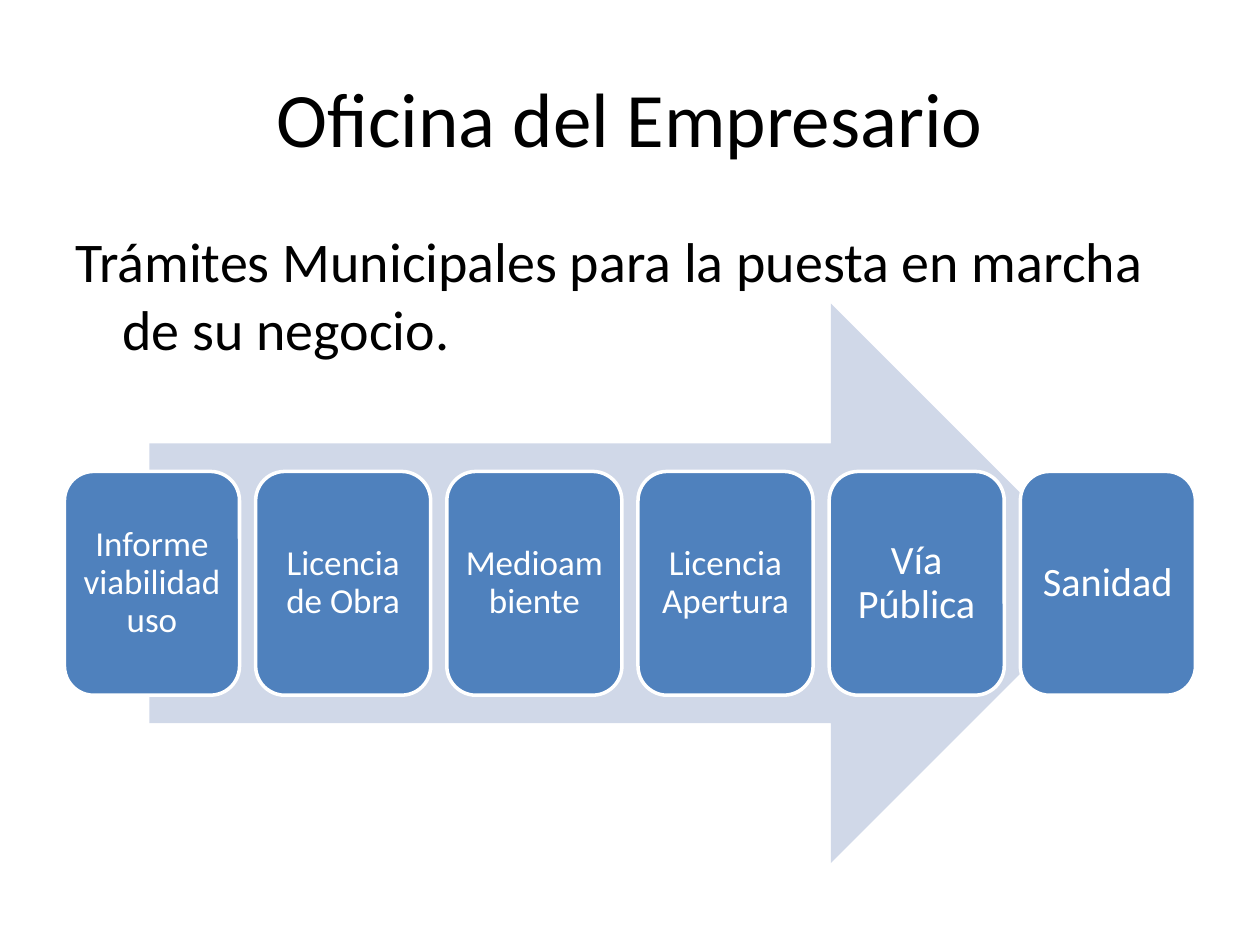
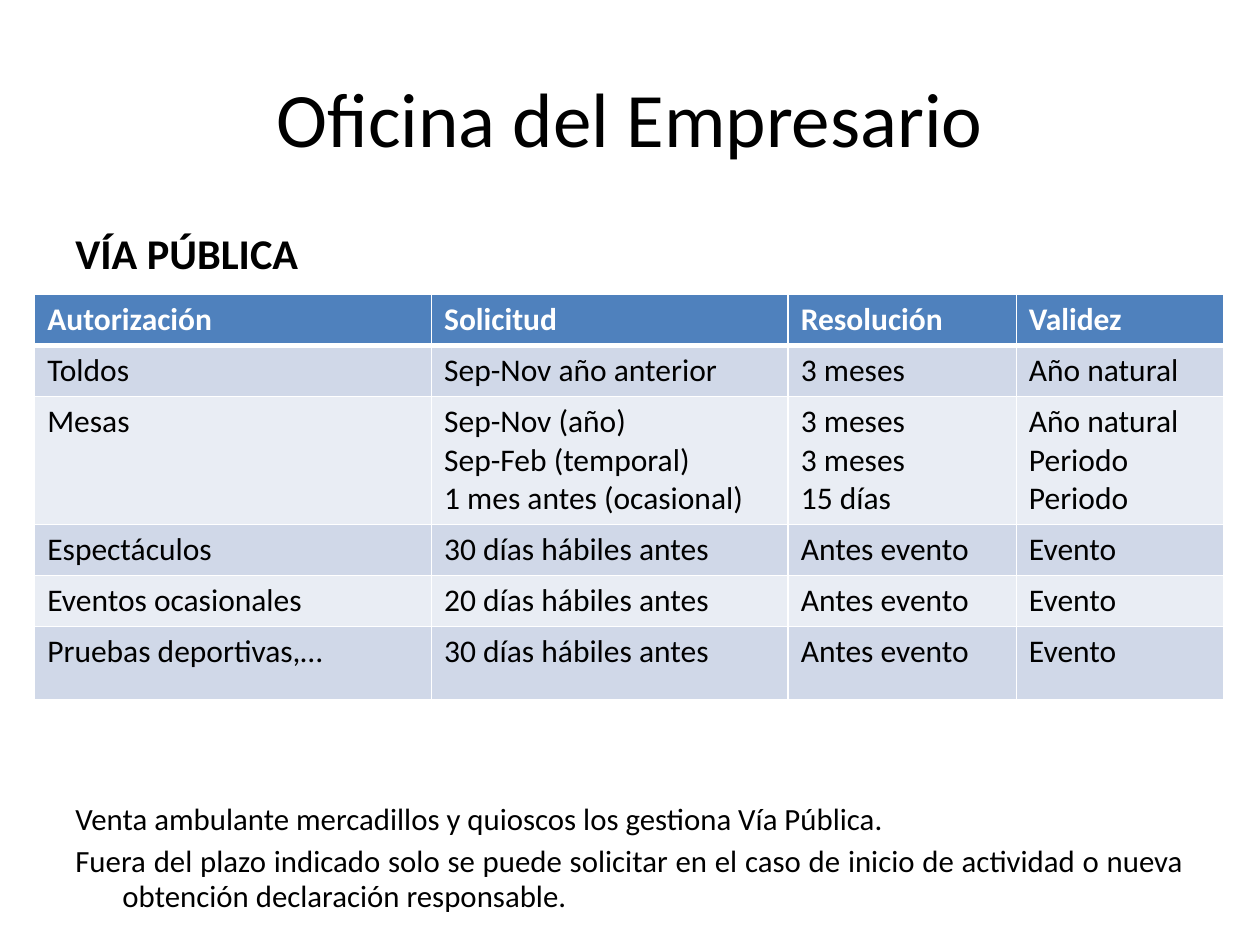
from lxml import etree
from pptx import Presentation
from pptx.dml.color import RGBColor
from pptx.enum import shapes, text
from pptx.oxml.ns import qn
from pptx.util import Cm, Pt

FONT = "Calibri"
BLACK = RGBColor(0x00, 0x00, 0x00)
WHITE = RGBColor(0xFF, 0xFF, 0xFF)
BLUE = RGBColor(0x4F, 0x81, 0xBD)
PALE_BLUE = RGBColor(0xD0, 0xD8, 0xE8)
PALE_GREY = RGBColor(0xE9, 0xED, 0xF4)

MARGIN = 1.27
CONTENT_WIDTH = 22.86
HANGING = 0.95

STEPS = [
    ("Informe viabilidad uso", 20, 0.2),
    ("Licencia de Obra", 20, 0.2),
    ("Medioambiente", 20, 0.2),
    ("Licencia Apertura", 20, 0.2),
    ("Vía Pública", 23, 0.25),
    ("Sanidad", 23, 0.25),
]
PERMITS = [
    ["Autorización", "Solicitud", "Resolución", "Validez"],
    ["Toldos", "Sep-Nov año anterior", "3 meses", "Año natural"],
    ["Mesas", "Sep-Nov (año)\nSep-Feb (temporal)\n1 mes antes (ocasional)",
     "3 meses\n3 meses\n15 días", "Año natural\nPeriodo\nPeriodo"],
    ["Espectáculos", "30 días hábiles antes", "Antes evento", "Evento"],
    ["Eventos ocasionales", "20 días hábiles antes", "Antes evento", "Evento"],
    ["Pruebas deportivas,…", "30 días hábiles antes", "Antes evento", "Evento"],
]
COLUMN_WIDTHS = [8.0, 7.19, 4.6, 4.19]
ROW_HEIGHTS = [1.03, 1.03, 2.58, 1.03, 1.03, 1.47]
NOTES = [
    "Venta ambulante mercadillos y quioscos los gestiona Vía Pública.",
    "Fuera del plazo indicado solo se puede solicitar en el caso de inicio "
    "de actividad o nueva obtención declaración responsable.",
]


def write_lines(frame, lines, size, color=BLACK, bold=False,
                align=text.PP_ALIGN.LEFT):
    """Write one paragraph per line and return the paragraphs."""
    frame.word_wrap = True
    for number, line in enumerate(lines):
        para = frame.add_paragraph() if number else frame.paragraphs[0]
        para.alignment = align
        span = para.add_run()
        span.text = line
        span.font.name = FONT
        span.font.size = Pt(size)
        span.font.bold = bold
        span.font.color.rgb = color
    return frame.paragraphs


def add_title(page):
    """Add the centred title that the slides share."""
    box = page.shapes.add_textbox(Cm(MARGIN), Cm(0.76),
                                  Cm(CONTENT_WIDTH), Cm(3.18))
    box.text_frame.vertical_anchor = text.MSO_ANCHOR.MIDDLE
    write_lines(box.text_frame, ["Oficina del Empresario"], 44,
                align=text.PP_ALIGN.CENTER)


def add_body(page, top, height, lines, size, **style):
    """Add body text with a hanging indent."""
    box = page.shapes.add_textbox(Cm(MARGIN), Cm(top),
                                  Cm(CONTENT_WIDTH), Cm(height))
    paras = write_lines(box.text_frame, lines, size, **style)
    for para in paras:
        properties = para._p.get_or_add_pPr()
        properties.set("marL", str(Cm(HANGING)))
        properties.set("indent", str(-Cm(HANGING)))
    return paras


def add_preset(page, preset, left, top, width, height, fill):
    """Add a filled preset shape without line or shadow."""
    shape = page.shapes.add_shape(preset, Cm(left), Cm(top),
                                  Cm(width), Cm(height))
    shape.shadow.inherit = False
    shape.fill.solid()
    shape.fill.fore_color.rgb = fill
    shape.line.fill.background()
    return shape


def add_process(page, left, top, width, height):
    """Add the wide arrow with the row of step cards across it."""
    arrow_width = 0.85 * width
    add_preset(page, shapes.MSO_SHAPE.RIGHT_ARROW,
               left + (width - arrow_width) / 2, top,
               arrow_width, height, PALE_BLUE)
    card_width, card_height = 3.53, 0.4 * height
    pitch = (width - card_width) / (len(STEPS) - 1)
    for number, (label, size, inset) in enumerate(STEPS):
        card = add_preset(page, shapes.MSO_SHAPE.ROUNDED_RECTANGLE,
                          left + number * pitch,
                          top + (height - card_height) / 2,
                          card_width, card_height, BLUE)
        card.line.color.rgb = WHITE
        card.line.width = Pt(2)
        frame = card.text_frame
        frame.margin_left = frame.margin_right = Cm(inset)
        frame.margin_top = frame.margin_bottom = Cm(inset)
        frame.vertical_anchor = text.MSO_ANCHOR.MIDDLE
        para = write_lines(frame, [label], size, WHITE,
                           align=text.PP_ALIGN.CENTER)[0]
        para.line_spacing = 0.9


def set_borders(cell, widths):
    """Draw white cell borders, ahead of the fill in the cell properties."""
    properties = cell._tc.get_or_add_tcPr()
    for position, (side, width) in enumerate(widths.items()):
        line = etree.Element(qn(f"a:{side}"), w=str(Pt(width)))
        fill = etree.SubElement(line, qn("a:solidFill"))
        etree.SubElement(fill, qn("a:srgbClr"), val=str(WHITE))
        properties.insert(position, line)


def add_permit_table(page, left, top):
    """Add the table of permits with a blue header and banded rows."""
    table = page.shapes.add_table(
        len(PERMITS), len(COLUMN_WIDTHS), Cm(left), Cm(top),
        Cm(sum(COLUMN_WIDTHS)), Cm(sum(ROW_HEIGHTS))).table
    for column, width in zip(table.columns, COLUMN_WIDTHS):
        column.width = Cm(width)
    for row, (height, entries) in enumerate(zip(ROW_HEIGHTS, PERMITS)):
        table.rows[row].height = Cm(height)
        header = row == 0
        band = BLUE if header else PALE_BLUE if row % 2 else PALE_GREY
        borders = {"lnL": 1, "lnR": 1, "lnT": 3 if row == 1 else 1,
                   "lnB": 3 if header else 1}
        for column, entry in enumerate(entries):
            cell = table.cell(row, column)
            cell.fill.solid()
            cell.fill.fore_color.rgb = band
            write_lines(cell.text_frame, entry.split("\n"), 18,
                        WHITE if header else BLACK, header)
            set_borders(cell, borders)


def build_steps_page(page):
    """Build the slide with the municipal steps."""
    add_title(page)
    add_body(page, 4.45, 3.2, ["Trámites Municipales para la puesta en "
                               "marcha de su negocio."], 32)
    add_process(page, 1.3, 6.12, 22.8, 11.28)


def build_permits_page(page):
    """Build the slide with the public space permits."""
    add_title(page)
    add_body(page, 4.45, 1.3, ["VÍA PÚBLICA"], 24.2, bold=True)
    add_permit_table(page, 0.7, 5.93)
    notes = add_body(page, 16.05, 2.8, NOTES, 17.6,
                     align=text.PP_ALIGN.JUSTIFY)
    for para in notes:
        para.line_spacing = 0.96
    notes[1].space_before = Pt(3.5)


def main():
    """Build and save the deck."""
    deck = Presentation()
    deck.slide_width, deck.slide_height = Cm(25.4), Cm(19.05)
    for build in (build_steps_page, build_permits_page):
        build(deck.slides.add_slide(deck.slide_layouts[6]))
    deck.save("out.pptx")


if __name__ == "__main__":
    main()
